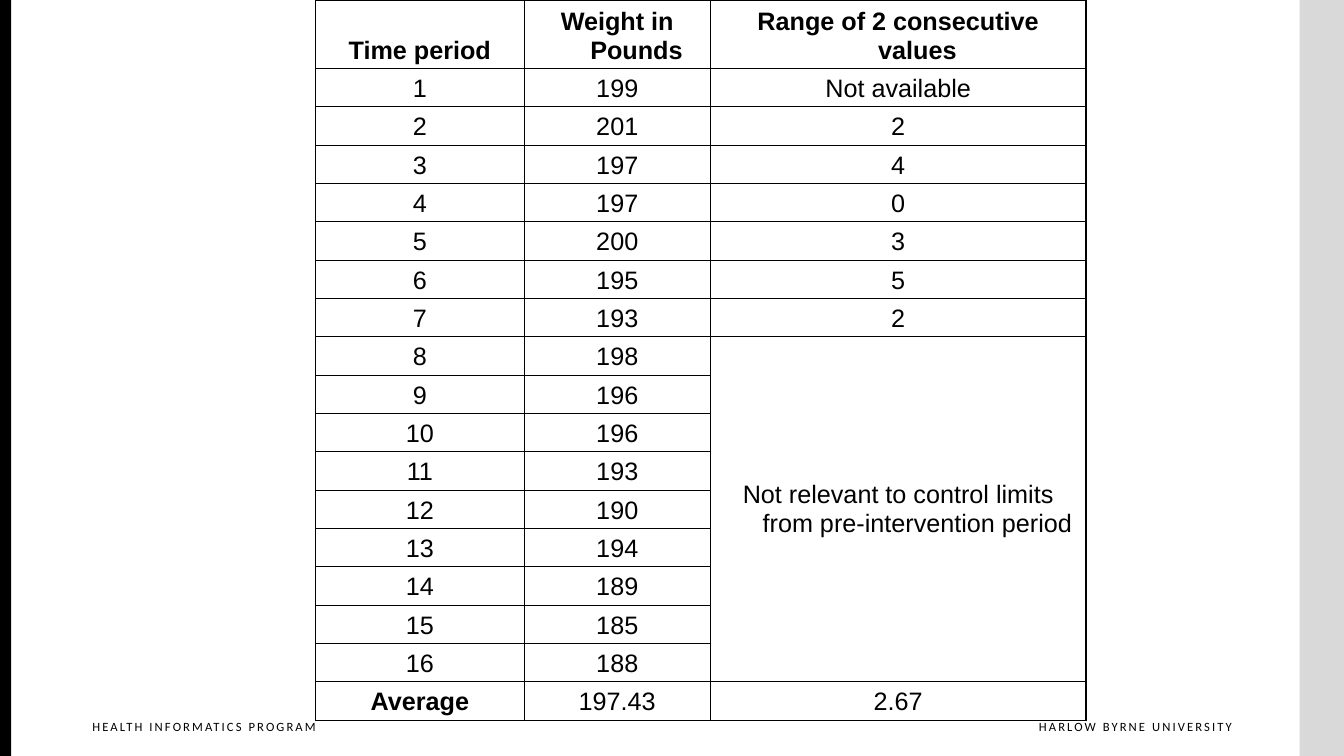
import dataclasses
import typing

import lxml.etree
import pptx
import pptx.dml.color
import pptx.enum.shapes
import pptx.enum.text
import pptx.oxml.ns
import pptx.util

Cm = pptx.util.Cm
Pt = pptx.util.Pt
Align = pptx.enum.text.PP_ALIGN
Anchor = pptx.enum.text.MSO_ANCHOR


@dataclasses.dataclass(frozen=True)
class Theme:
    black: str = "000000"
    grey: str = "D9D9D9"
    white: str = "FFFFFF"
    table_font: str = "Arial"
    footer_font: str = "Calibri"
    table_size: int = 18
    footer_size: int = 9


class Band(typing.NamedTuple):
    left: float
    width: float
    color: str


class Footer(typing.NamedTuple):
    text: str
    left: float
    width: float
    align: Align


THEME = Theme()
SLIDE_WIDTH, SLIDE_HEIGHT = 33.87, 19.05
BANDS = [Band(32.75, 1.12, THEME.grey), Band(0, 0.28, THEME.black)]
FOOTERS = [
    Footer("HARLOW BYRNE UNIVERSITY", 25.07, 5.97, Align.RIGHT),
    Footer("HEALTH INFORMATICS PROGRAM", 2.08, 6.45, Align.LEFT),
]
FOOTER_TOP, FOOTER_HEIGHT = 17.98, 0.84

HEADINGS = ["Time period", "Weight in Pounds", "Range of 2 consecutive values"]
WEIGHTS = [199, 201, 197, 197, 200, 195, 193, 198, 196, 196, 193, 190, 194, 189, 185, 188]
RANGES = ["Not available", "2", "4", "0", "3", "5", "2"]
POST_INTERVENTION = "Not relevant to control limits from pre-intervention period"
AVERAGES = ["Average", "197.43", "2.67"]
TABLE_LEFT = 7.95
COLUMN_WIDTHS = [5.26, 4.69, 9.47]
HEADING_HEIGHT, BODY_HEIGHT = 1.68, 16.43
HANGING_INDENT = 0.97


def rgb(color: str) -> pptx.dml.color.RGBColor:
    return pptx.dml.color.RGBColor.from_string(color)


def add_run(paragraph, text: str, font: str, size: int, bold: bool = False):
    run = paragraph.add_run()
    run.text = text
    run.font.name = font
    run.font.size = Pt(size)
    run.font.bold = bold
    run.font.color.rgb = rgb(THEME.black)
    return run


def draw_band(slide, band: Band) -> None:
    strip = slide.shapes.add_shape(
        pptx.enum.shapes.MSO_SHAPE.RECTANGLE,
        Cm(band.left), 0, Cm(band.width), Cm(SLIDE_HEIGHT),
    )
    strip.shadow.inherit = False
    strip.fill.solid()
    strip.fill.fore_color.rgb = rgb(band.color)
    strip.line.fill.background()


def draw_footer(slide, footer: Footer) -> None:
    box = slide.shapes.add_textbox(
        Cm(footer.left), Cm(FOOTER_TOP), Cm(footer.width), Cm(FOOTER_HEIGHT)
    )
    frame = box.text_frame
    frame.word_wrap = True
    frame.margin_right = 0
    paragraph = frame.paragraphs[0]
    paragraph.alignment = footer.align
    run = add_run(paragraph, footer.text, THEME.footer_font, THEME.footer_size)
    run.font._element.set("spc", "150")


def style_cell(cell) -> None:
    cell.margin_top = cell.margin_bottom = Cm(0.1)
    properties = cell._tc.get_or_add_tcPr()
    for side in ("a:lnL", "a:lnR", "a:lnT", "a:lnB"):
        border = lxml.etree.SubElement(properties, pptx.oxml.ns.qn(side), w=str(Pt(1)))
        fill = lxml.etree.SubElement(border, pptx.oxml.ns.qn("a:solidFill"))
        lxml.etree.SubElement(fill, pptx.oxml.ns.qn("a:srgbClr"), val=THEME.black)
    cell.fill.solid()
    cell.fill.fore_color.rgb = rgb(THEME.white)


def write_cell(cell, text: str, bold: bool, anchor: Anchor = Anchor.BOTTOM) -> None:
    cell.vertical_anchor = anchor
    paragraph = cell.text_frame.paragraphs[0]
    paragraph.alignment = Align.CENTER
    indents = paragraph._p.get_or_add_pPr()
    indents.set("marL", str(Cm(HANGING_INDENT)))
    indents.set("indent", str(-Cm(HANGING_INDENT)))
    add_run(paragraph, text, THEME.table_font, THEME.table_size, bold)


def draw_weight_table(slide) -> None:
    periods = len(WEIGHTS)
    average_row = periods + 1
    table = slide.shapes.add_table(
        periods + 2, len(HEADINGS), Cm(TABLE_LEFT), 0,
        Cm(sum(COLUMN_WIDTHS)), Cm(HEADING_HEIGHT + BODY_HEIGHT),
    ).table
    table.first_row = table.horz_banding = False
    for column, width in zip(table.columns, COLUMN_WIDTHS):
        column.width = Cm(width)
    for index, row in enumerate(table.rows):
        row.height = Cm(BODY_HEIGHT / average_row if index else HEADING_HEIGHT)
    for cell in table.iter_cells():
        style_cell(cell)

    for column, heading in enumerate(HEADINGS):
        write_cell(table.cell(0, column), heading, True)
    for period, weight in enumerate(WEIGHTS, start=1):
        write_cell(table.cell(period, 0), str(period), False)
        write_cell(table.cell(period, 1), str(weight), False)
    for period, value in enumerate(RANGES, start=1):
        write_cell(table.cell(period, 2), value, False)
    for column, average in enumerate(AVERAGES):
        write_cell(table.cell(average_row, column), average, column == 0)

    remark = table.cell(len(RANGES) + 1, 2)
    remark.merge(table.cell(periods, 2))
    write_cell(remark, POST_INTERVENTION, False, Anchor.MIDDLE)


def main() -> None:
    presentation = pptx.Presentation()
    presentation.slide_width = Cm(SLIDE_WIDTH)
    presentation.slide_height = Cm(SLIDE_HEIGHT)
    slide = presentation.slides.add_slide(presentation.slide_layouts[6])
    for band in BANDS:
        draw_band(slide, band)
    for footer in FOOTERS:
        draw_footer(slide, footer)
    draw_weight_table(slide)
    presentation.save("out.pptx")


if __name__ == "__main__":
    main()
